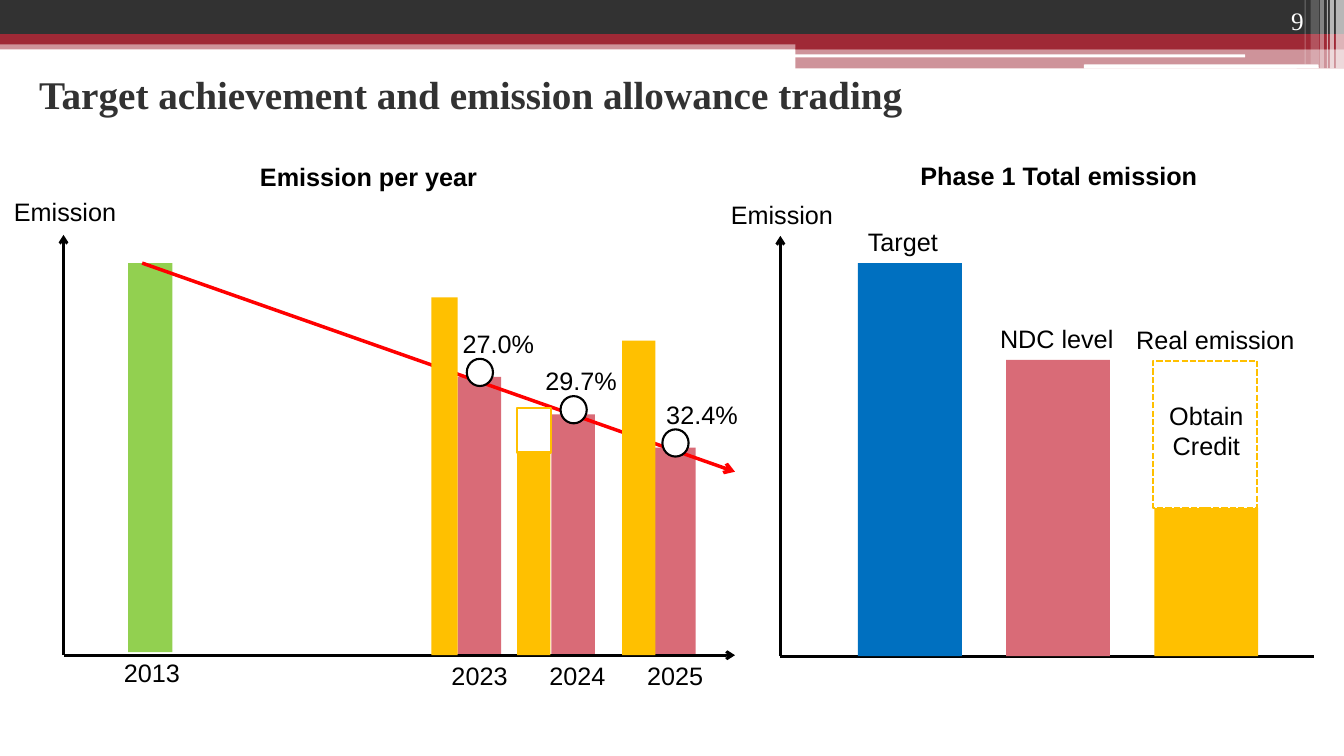
import pptx
import pptx.util
import pptx.dml.color
import pptx.enum.dml
import pptx.enum.shapes
import pptx.enum.text
import pptx.oxml.ns
import lxml.etree

# The grid has square cells: 13.33 columns by 7.5 rows.
CELL = pptx.util.Inches(1)
COLS, ROWS = 13.33, 7.5
COLORS = {
    "dark": "323232", "wine": "9F2936", "white": "FFFFFF", "black": "000000",
    "rose": "D96B77", "gold": "FFC000", "green": "92D050", "blue": "0070C0",
    "red": "FF0000",
}
KINDS = pptx.enum.shapes.MSO_SHAPE
ALIGN = pptx.enum.text.PP_ALIGN
ANCHOR = pptx.enum.text.MSO_ANCHOR


def cells(*sizes):
    return [round(size * CELL) for size in sizes]


def color(name):
    return pptx.dml.color.RGBColor.from_string(COLORS[name])


def child(parent, tag, **attrs):
    return lxml.etree.SubElement(parent, pptx.oxml.ns.qn(tag), **attrs)


def block(slide, x, y, w, h, fill, kind=KINDS.RECTANGLE, alpha=100, edge=None, dash=False):
    """Draw a filled shape; alpha is its opacity in percent."""
    shape = slide.shapes.add_shape(kind, *cells(x, y, w, h))
    shape.shadow.inherit = False
    shape.fill.solid()
    shape.fill.fore_color.rgb = color(fill)
    if alpha < 100:
        tint = shape.fill._xPr.find(".//" + pptx.oxml.ns.qn("a:srgbClr"))
        child(tint, "a:alpha", val=str(alpha * 1000))
    if edge:
        shape.line.color.rgb = color(edge)
        shape.line.width = pptx.util.Pt(1.5)
        if dash:
            shape.line.dash_style = pptx.enum.dml.MSO_LINE.SQUARE_DOT
    else:
        shape.line.fill.background()


def label(slide, x, y, text, w=2.14, h=0.4, size=18, font="Arial", ink="black",
          bold=False, align=ALIGN.LEFT, anchor=ANCHOR.TOP):
    box = slide.shapes.add_textbox(*cells(x, y, w, h))
    frame = box.text_frame
    frame.word_wrap = True
    frame.vertical_anchor = anchor
    frame.text = text
    for para in frame.paragraphs:
        para.alignment = align
        para.font.name = font
        para.font.size = pptx.util.Pt(size)
        para.font.bold = bold
        para.font.color.rgb = color(ink)


def line(slide, x1, y1, x2, y2, ink="black", width=2, arrow=True):
    link = slide.shapes.add_connector(
        pptx.enum.shapes.MSO_CONNECTOR.STRAIGHT, *cells(x1, y1, x2, y2))
    link.line.color.rgb = color(ink)
    link.line.width = pptx.util.Pt(width)
    if arrow:
        child(link.line._get_or_add_ln(), "a:tailEnd", type="arrow")
    child(link._element.spPr, "a:effectLst")


def banner(slide, x, y, w):
    """Draw the top bands, the stripes at their right end and the page number."""
    right, half = x + w, x + 7.89
    block(slide, x, y + 0.4, w, 0.09, "wine", alpha=50)
    block(slide, x, y, w, 0.34, "dark")
    block(slide, x, y + 0.34, w, 0.1, "wine")
    block(slide, half, y + 0.39, right - half, 0.1, "wine")
    block(slide, half, y + 0.48, right - half, 0.2, "wine", alpha=50)
    for left, top, wide, high in ((7.88, 0.54, 4.47, 0.03), (10.75, 0.64, 2.33, 0.04)):
        block(slide, x + left, y + top, wide, high, "white", KINDS.ROUNDED_RECTANGLE)
    stripes = ((0.08, 0.08, 0.68, 65), (0.14, 0.04, 0.68, 65), (0.17, 0.01, 0.68, 60),
               (0.24, 0.04, 0.68, 40), (0.33, 0.08, 0.64, 20), (0.39, 0.01, 0.64, 30))
    for back, wide, high, alpha in stripes:
        block(slide, right - back, y, wide, high, "white", alpha=alpha)
    label(slide, right - 1.41, y, "9", 1.11, font="Times New Roman", ink="white",
          align=ALIGN.RIGHT, anchor=ANCHOR.BOTTOM)


def yearly(slide, x, y, w, h):
    """Draw yearly emissions on axes that fill the box."""
    base = y + h
    # year, gold left, gold height, rose left, rose height, share, share left
    years = (("2023", 3.65, 3.55, 3.91, 2.76, "27.0%", 3.86),
             ("2024", 4.5, 2.01, 4.84, 2.39, "29.7%", 4.68),
             ("2025", 5.54, 3.12, 5.85, 2.06, "32.4%", 5.88))
    for _, _, _, left, high, _, _ in years:
        block(slide, x + left, base - high, 0.43 if left < 5 else 0.42, high, "rose")
    line(slide, x, base, x, y)
    line(slide, x, base, x + w, base)
    block(slide, x + 0.64, y + 0.28, 0.44, 3.86, "green")
    label(slide, x + 0.5, base - 0.03, "2013")
    line(slide, x + 0.78, y + 0.28, x + w, y + 2.35, "red", 2.5)
    for i, (year, real, tall, left, high, share, start) in enumerate(years):
        top = base - high
        block(slide, x + left + 0.09, top - 0.18, 0.26, 0.27, "white", KINDS.OVAL,
              edge="black")
        label(slide, x + 3.75 + 0.97 * i, base, year)
        label(slide, x + start, top - 0.53, share)
        block(slide, x + real, base - tall, 0.26 if i == 0 else 0.33, tall, "gold")
    block(slide, x + 4.5, base - 2.45, 0.34, 0.44, "white", edge="gold")
    label(slide, x - 0.59, y - 0.43, "Emission")
    label(slide, x + 1.85, y - 0.78, "Emission per year", 3.09, bold=True)


def total(slide, x, y, w, h):
    """Draw the totals of the phase on axes that fill the box."""
    base, wide, step = y + h, 1.03, 1.47
    line(slide, x, base, x + w, base, arrow=False)
    line(slide, x, base, x, y)
    bars = (("Target", 3.9, "blue", 0, 2.2), ("NDC level", 2.94, "rose", -0.16, 3.16),
            ("Real emission", 1.47, "gold", -0.28, 3.17))
    for i, (name, high, fill, shift, row) in enumerate(bars):
        left = x + 0.77 + step * i
        block(slide, left, base - high, wide, high, fill)
        label(slide, left + shift, y + row - 2.34, name)
    block(slide, left - 0.01, base - 2.93, wide, 1.46, "white", edge="gold", dash=True)
    label(slide, left, base - 2.59, "Obtain\nCredit", wide, 0.71, align=ALIGN.CENTER)
    label(slide, x - 0.59, y - 0.41, "Emission")
    label(slide, x + 1.29, y - 0.8, "Phase 1 Total emission", 3.09, bold=True)


def main():
    deck = pptx.Presentation()
    deck.slide_width, deck.slide_height = cells(COLS, ROWS)
    slide = deck.slides.add_slide(deck.slide_layouts[6])
    banner(slide, 0, 0, COLS)
    label(slide, 0.29, 0.35, "Target achievement and emission allowance trading", 12, 1.17,
          size=28, font="Times New Roman", ink="dark", bold=True, anchor=ANCHOR.MIDDLE)
    yearly(slide, 0.63, 2.33, 6.66, 4.17)
    total(slide, 7.74, 2.34, 5.29, 4.17)
    deck.save("out.pptx")


if __name__ == "__main__":
    main()
